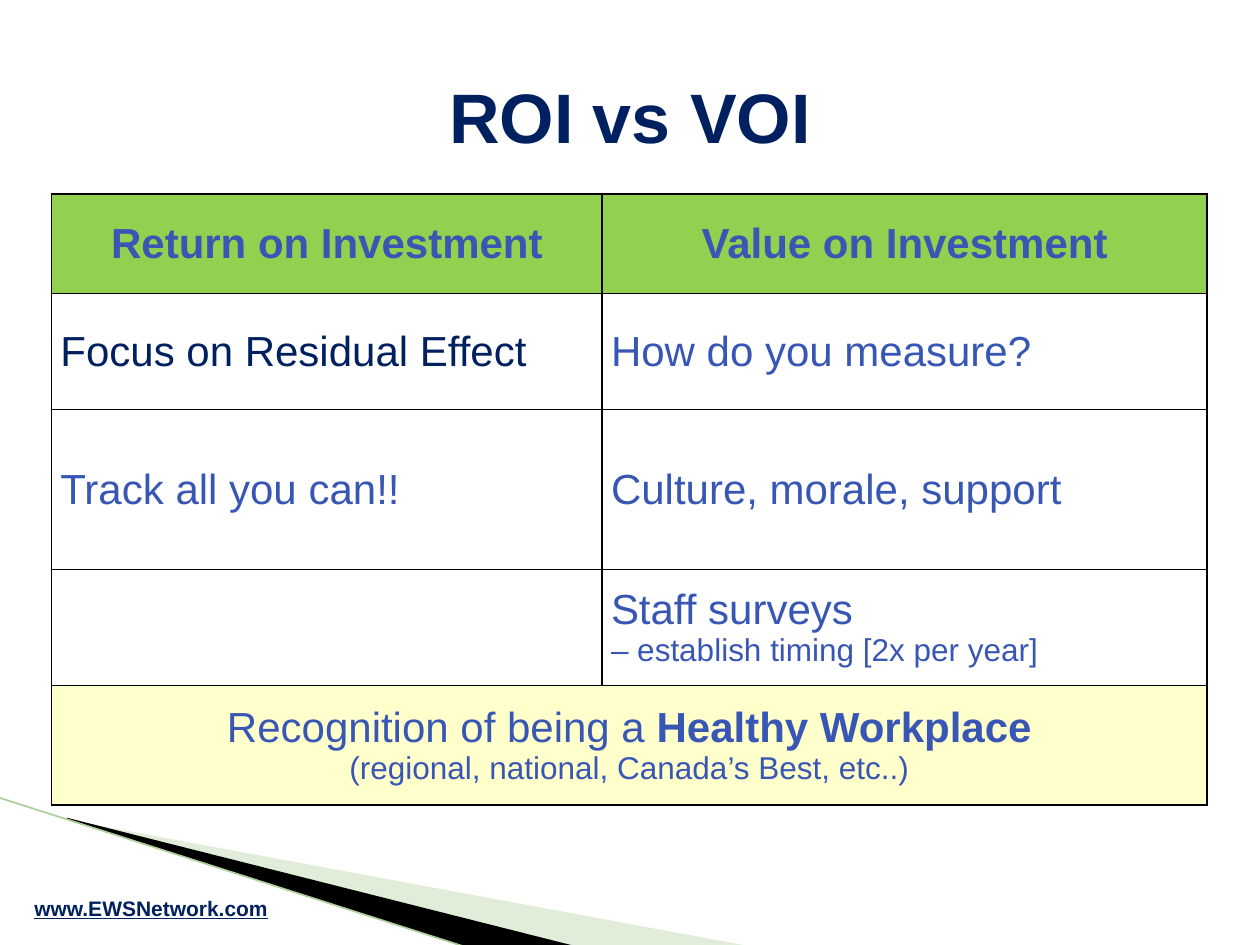
from lxml import etree
from pptx import Presentation
from pptx import util as u
from pptx.dml.color import RGBColor
from pptx.enum import shapes, text
from pptx.oxml import parse_xml
from pptx.oxml.ns import nsdecls, qn

THEME = {
    "font": "Arial", "navy": "002060", "blue": "3856B4", "green": "92D050",
    "cream": "FFFFCC", "black": "000000", "pale": "B4D3A1", "edge": "ACCE98",
    "title": 40, "body": 24, "detail": 18, "link": 12,
}

deck = Presentation()
deck.slide_width, deck.slide_height = u.Inches(10), u.Inches(7.5)
page = deck.slides.add_slide(deck.slide_layouts[6])


def at(*percents):
    """Turn alternating percentages of slide width and height into lengths."""
    sides = (deck.slide_width, deck.slide_height)
    return [u.Emu(round(sides[i % 2] * p / 100)) for i, p in enumerate(percents)]


def write(frame, paragraphs, align=text.PP_ALIGN.LEFT):
    """Fill a text frame; each paragraph is a list of (wording, font values)."""
    for number, spans in enumerate(paragraphs):
        para = frame.add_paragraph() if number else frame.paragraphs[0]
        para.alignment = align
        for wording, values in spans:
            span = para.add_run()
            span.text = wording
            look = {"name": THEME["font"], "size": THEME["body"],
                    "color": THEME["blue"], "bold": False} | values
            span.font.color.rgb = RGBColor.from_string(look.pop("color"))
            look["size"] = u.Pt(look["size"])
            for name, value in look.items():
                setattr(span.font, name, value)


# Corner wedges: corners as percentages of the slide
wedges = [
    ("pale", 40, [(5.5, 86.8), (59.5, 100.13), (45.6, 100.13), (5.5, 86.67)]),
    ("black", 100, [(5.3, 86.53), (45.7, 100.13), (37.2, 100.27), (5.4, 86.67)]),
]
for color, opacity, corners in wedges:
    points = [at(*corner) for corner in corners]
    outline = page.shapes.build_freeform(*points[0])
    outline.add_line_segments(points[1:], close=True)
    wedge = outline.convert_to_shape()
    wedge.shadow.inherit = False
    wedge.line.fill.background()
    wedge.fill.solid()
    wedge.fill.fore_color.rgb = RGBColor.from_string(THEME[color])
    if opacity < 100:
        tint = wedge.fill._xPr.find(".//" + qn("a:srgbClr"))
        etree.SubElement(tint, qn("a:alpha"), val=str(opacity * 1000))

edge = page.shapes.add_connector(shapes.MSO_CONNECTOR.STRAIGHT,
                                 *at(-0.1, 84.4, 37.1, 100.27))
edge.line.color.rgb = RGBColor.from_string(THEME["edge"])
edge.line.width = u.Pt(0.95)
etree.SubElement(edge._element.spPr, qn("a:effectLst"))

# Comparison table
columns = [43.7, 48]
rows = [10.53, 12.27, 16.93, 12.27, 12.67]
bold, navy = {"bold": True}, {"color": THEME["navy"]}
detail = {"size": THEME["detail"]}
content = [
    [[[("Return on Investment", bold)]], [[("Value on Investment", bold)]]],
    [[[("Focus on Residual Effect", navy)]], [[("How do you measure?", {})]]],
    [[[("Track all you can!!", {})]], [[("Culture, morale, support", {})]]],
    [[], [[("Staff surveys", {})], [("– establish timing [2x per year]", detail)]]],
    [[[("Recognition of being a ", {}), ("Healthy Workplace", bold)],
      [("(regional, national, Canada’s Best, etc..)", detail)]], []],
]
fills = {0: "green", len(rows) - 1: "cream"}

table = page.shapes.add_table(len(rows), len(columns),
                              *at(4.1, 20.53, sum(columns), sum(rows))).table
table.first_row = table.horz_banding = False
for column, share in zip(table.columns, columns):
    column.width = at(share)[0]
for row, share in zip(table.rows, rows):
    row.height = at(0, share)[1]
table.cell(len(rows) - 1, 0).merge(table.cell(len(rows) - 1, 1))

cell_format = {
    "margin_left": u.Inches(0.07), "margin_right": u.Inches(0.07),
    "margin_top": 0, "margin_bottom": 0,
    "vertical_anchor": text.MSO_ANCHOR.MIDDLE,
}
for r, line in enumerate(content):
    for c, paragraphs in enumerate(line):
        cell = table.cell(r, c)
        for name, value in cell_format.items():
            setattr(cell, name, value)
        for side in "LRTB":
            cell._tc.get_or_add_tcPr().append(parse_xml(
                f'<a:ln{side} {nsdecls("a")} w="{u.Pt(1)}"><a:solidFill>'
                f'<a:srgbClr val="{THEME["black"]}"/></a:solidFill></a:ln{side}>'))
        if r in fills:
            cell.fill.solid()
            cell.fill.fore_color.rgb = RGBColor.from_string(THEME[fills[r]])
        else:
            cell.fill.background()
        align = text.PP_ALIGN.CENTER if r in fills else text.PP_ALIGN.LEFT
        write(cell.text_frame, paragraphs, align)

# Title and web address
labels = [
    ("ROI vs VOI", (0, 3.87, 100, 16.67), text.MSO_ANCHOR.MIDDLE,
     {"size": THEME["title"]}),
    ("www.EWSNetwork.com", (0, 94.13, 24, 4), text.MSO_ANCHOR.TOP,
     {"size": THEME["link"], "underline": True}),
]
for wording, place, anchor, values in labels:
    box = page.shapes.add_textbox(*at(*place))
    box.text_frame.word_wrap = True
    box.text_frame.vertical_anchor = anchor
    write(box.text_frame, [[(wording, bold | navy | values)]],
          text.PP_ALIGN.CENTER)

deck.save("out.pptx")
